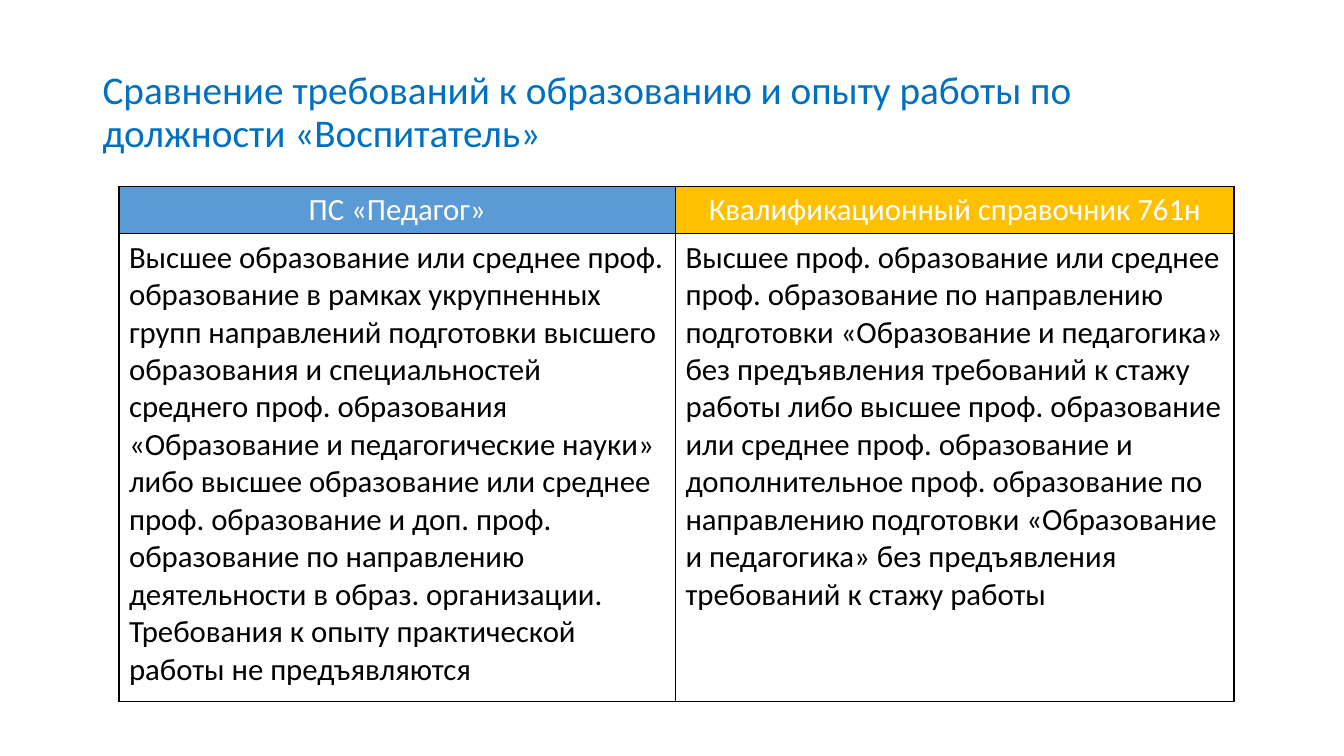
from dataclasses import dataclass

from lxml.etree import SubElement
from pptx import Presentation
from pptx.dml.color import RGBColor as Color
from pptx.enum.text import MSO_ANCHOR as Anchor, PP_ALIGN as Align
from pptx.oxml.ns import qn
from pptx.util import Inches, Pt

# Content
TITLE = "Сравнение требований к образованию и опыту работы по должности «Воспитатель»"
COLUMNS = [
    {
        "heading": "ПС «Педагог»",
        "fill": "5B9BD5",
        "width": 5.52,
        "body": [
            "Высшее образование или среднее проф. образование в рамках укрупненных "
            "групп направлений подготовки высшего образования и специальностей "
            "среднего проф. образования «Образование и педагогические науки» либо "
            "высшее образование или среднее проф. образование и доп. проф. "
            "образование по направлению деятельности в образ. организации.",
            "Требования к опыту практической работы не предъявляются",
        ],
    },
    {
        "heading": "Квалификационный справочник 761н",
        "fill": "FFC000",
        "width": 5.54,
        "body": [
            "Высшее проф. образование или среднее проф. образование по направлению "
            "подготовки «Образование и педагогика» без предъявления требований к "
            "стажу работы либо высшее проф. образование или среднее проф. "
            "образование и дополнительное проф. образование по направлению "
            "подготовки «Образование и педагогика» без предъявления требований к "
            "стажу работы",
        ],
    },
]
ROW_HEIGHTS = [0.47, 4.64]


@dataclass(frozen=True)
class Theme:
    font: str = "Calibri"
    title_size: int = 28
    table_size: int = 22
    border_width: int = 1
    title: str = "0070C0"
    light: str = "FFFFFF"
    dark: str = "000000"


THEME = Theme()


def write(frame, lines, size, color, align=Align.LEFT, spacing=1.0):
    for index, line in enumerate(lines):
        para = frame.add_paragraph() if index else frame.paragraphs[0]
        para.alignment = align
        para.line_spacing = spacing
        span = para.add_run()
        span.text = line
        span.font.name = THEME.font
        span.font.size = Pt(size)
        span.font.bold = False
        span.font.color.rgb = Color.from_string(color)


def add_borders(cell):
    properties = cell._tc.get_or_add_tcPr()
    for position, side in enumerate(("lnL", "lnR", "lnT", "lnB")):
        line = SubElement(properties, qn(f"a:{side}"), w=str(Pt(THEME.border_width)))
        fill = SubElement(line, qn("a:solidFill"))
        SubElement(fill, qn("a:srgbClr"), val=THEME.dark)
        properties.insert(position, line)  # borders come before the cell fill


def fill_cell(cell, lines, fill, color, align):
    cell.fill.solid()
    cell.fill.fore_color.rgb = Color.from_string(fill)
    add_borders(cell)
    write(cell.text_frame, lines, THEME.table_size, color, align)


def add_title(page):
    box = page.shapes.add_textbox(Inches(0.92), Inches(0.4), Inches(11.5), Inches(1.45))
    box.text_frame.word_wrap = True
    box.text_frame.vertical_anchor = Anchor.MIDDLE
    write(box.text_frame, [TITLE], THEME.title_size, THEME.title, spacing=0.9)


def add_comparison(page):
    width = sum(column["width"] for column in COLUMNS)
    table = page.shapes.add_table(
        len(ROW_HEIGHTS), len(COLUMNS), Inches(1.18), Inches(1.85),
        Inches(width), Inches(sum(ROW_HEIGHTS)),
    ).table
    table.first_row = False
    table.horz_banding = False
    for row, height in zip(table.rows, ROW_HEIGHTS):
        row.height = Inches(height)
    for index, column in enumerate(COLUMNS):
        table.columns[index].width = Inches(column["width"])
        fill_cell(table.cell(0, index), [column["heading"]], column["fill"],
                  THEME.light, Align.CENTER)
        fill_cell(table.cell(1, index), column["body"], THEME.light,
                  THEME.dark, Align.LEFT)


def main():
    deck = Presentation()
    deck.slide_width, deck.slide_height = Inches(13.33), Inches(7.5)
    page = deck.slides.add_slide(deck.slide_layouts[6])
    add_title(page)
    add_comparison(page)
    deck.save("out.pptx")


if __name__ == "__main__":
    main()
